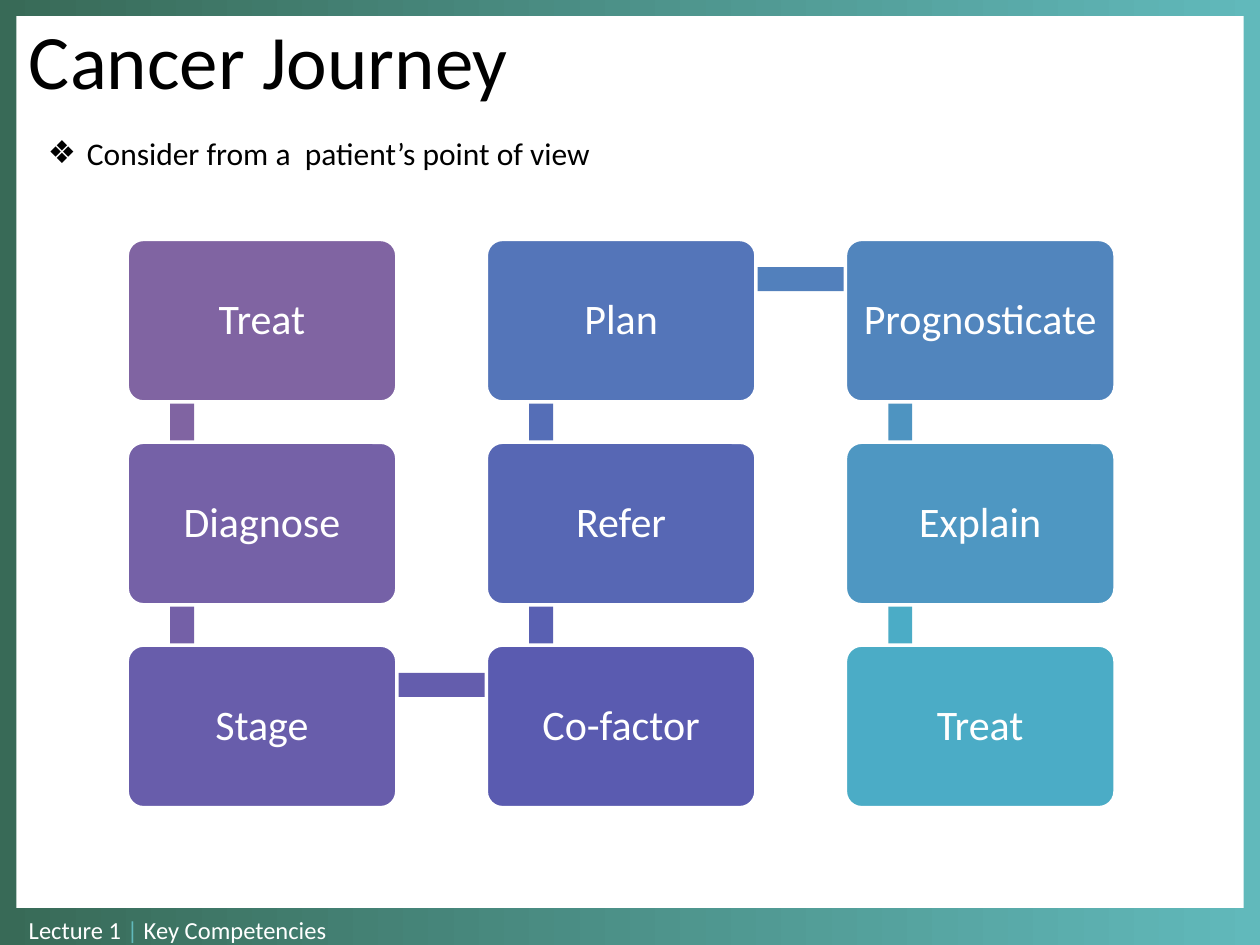
from lxml.etree import SubElement
from pptx import Presentation
from pptx.dml.color import RGBColor
from pptx.enum.shapes import MSO_SHAPE as Shape
from pptx.enum.text import MSO_ANCHOR as Anchor, MSO_AUTO_SIZE as AutoSize, PP_ALIGN as Align
from pptx.oxml.ns import qn
from pptx.util import Inches, Pt

WHITE = RGBColor(0xFF, 0xFF, 0xFF)
BLACK = RGBColor(0, 0, 0)
GREEN = RGBColor(0x38, 0x6A, 0x57)
TEAL = RGBColor(0x61, 0xB9, 0xBB)

# Journey grid: lefts of columns and tops of rows
COLUMNS = [1.01 + 2.85 * i for i in range(3)]
ROWS = [1.9 + 1.61 * i for i in range(3)]
BOX_WIDTH, BOX_HEIGHT = 2.14, 1.29
BAR = 0.19

# Label, column, row, box colour, colour of the bar to the next step
STEPS = [
    ("Treat", 0, 0, "8064A2", "8064A2"),
    ("Diagnose", 0, 1, "7561A7", "7460A7"),
    ("Stage", 0, 2, "685DAB", "645DAD"),
    ("Co-factor", 1, 2, "5A5BB0", "5960B2"),
    ("Refer", 1, 1, "5767B4", "556EB7"),
    ("Plan", 1, 0, "5475B9", "5280BC"),
    ("Prognosticate", 2, 0, "5185BD", "4E94C1"),
    ("Explain", 2, 1, "4E97C2", "4BACC6"),
    ("Treat", 2, 2, "4BACC6", None),
]


def set_values(target, values):
    for name, value in values.items():
        setattr(target, name, value)


def place(shape, left, top, width, height):
    set_values(shape, {"left": Inches(left), "top": Inches(top),
                       "width": Inches(width), "height": Inches(height)})


def add_run(paragraph, text, size, color):
    run = paragraph.add_run()
    run.text = text
    set_values(run.font, {"name": "Calibri", "size": Pt(size)})
    run.font.color.rgb = color


def add_block(slide, left, top, width, height, color=None, kind=Shape.RECTANGLE):
    """Add a borderless block; without a colour it gets the frame gradient."""
    shape = slide.shapes.add_shape(
        kind, Inches(left), Inches(top), Inches(width), Inches(height))
    shape.shadow.inherit = False
    shape.line.fill.background()
    if color is not None:
        shape.fill.solid()
        shape.fill.fore_color.rgb = color
    else:
        shape.fill.gradient()
        shape.fill.gradient_angle = 0
        for stop, position, stop_color in zip(
                shape.fill.gradient_stops, (0, 1), (GREEN, TEAL)):
            stop.position = position
            stop.color.rgb = stop_color
    return shape


def add_frame(slide):
    add_block(slide, 0, 0, 10, 0.13)
    add_block(slide, 0, 7.21, 10, 0.29)
    add_block(slide, 0, 0.06, 0.13, 7.44, GREEN)
    add_block(slide, 9.87, 0.03, 0.13, 7.44, TEAL)


def add_footer(slide):
    box = slide.shapes.add_textbox(Inches(0.13), Inches(7.21), Inches(5.34), Inches(0.34))
    box.text_frame.word_wrap = True
    for text, color in (("Lecture 1 ", WHITE), ("| ", TEAL), ("Key Competencies", WHITE)):
        add_run(box.text_frame.paragraphs[0], text, 14, color)


def fill_placeholder(shape, position, text, size):
    place(shape, *position)
    set_values(shape.text_frame, {"word_wrap": True, "auto_size": AutoSize.NONE,
                                  "vertical_anchor": Anchor.TOP})
    paragraph = shape.text_frame.paragraphs[0]
    set_values(paragraph, {"alignment": Align.LEFT, "space_before": Pt(0)})
    add_run(paragraph, text, size, BLACK)
    return paragraph


def add_bullet(paragraph, character, indent):
    properties = paragraph._p.get_or_add_pPr()
    properties.set("marL", str(Inches(indent)))
    properties.set("indent", str(-Inches(indent)))
    SubElement(properties, qn("a:buFont")).set("typeface", "Arial")
    SubElement(properties, qn("a:buChar")).set("char", character)


def add_bar(slide, column, row, next_column, next_row, color):
    """Add the bar between two steps; the boxes cover its ends."""
    left, top = COLUMNS[column], ROWS[min(row, next_row)]
    if column == next_column:
        add_block(slide, left + 0.34, top + 0.32, BAR, 1.6, color)
    else:
        add_block(slide, left + 0.44, top + 0.22, 2.84, BAR, color)


def add_step(slide, text, column, row, color):
    box = add_block(slide, COLUMNS[column], ROWS[row], BOX_WIDTH, BOX_HEIGHT,
                    color, Shape.ROUNDED_RECTANGLE)
    box.adjustments[0] = 0.1
    box.line.color.rgb = WHITE
    box.line.width = Pt(2)
    margins = {f"margin_{side}": Inches(0.1) for side in ("left", "top", "right", "bottom")}
    set_values(box.text_frame, {"word_wrap": True, "vertical_anchor": Anchor.MIDDLE, **margins})
    paragraph = box.text_frame.paragraphs[0]
    set_values(paragraph, {"alignment": Align.CENTER, "line_spacing": 0.9})
    add_run(paragraph, text, 24, WHITE)


def add_journey(slide):
    for step, following in zip(STEPS, STEPS[1:] + [None]):
        text, column, row, box_color, bar_color = step
        if following:
            add_bar(slide, column, row, following[1], following[2],
                    RGBColor.from_string(bar_color))
        add_step(slide, text, column, row, RGBColor.from_string(box_color))


def main():
    presentation = Presentation()
    set_values(presentation, {"slide_width": Inches(10), "slide_height": Inches(7.5)})
    slide = presentation.slides.add_slide(presentation.slide_layouts[1])

    # Frame and footer
    add_frame(slide)
    add_footer(slide)

    # Title and bullet
    fill_placeholder(slide.shapes.title, (0.13, 0.05, 9.73, 0.84), "Cancer Journey", 44)
    bullet = fill_placeholder(slide.placeholders[1], (0.28, 1.01, 9.45, 1.31),
                              "Consider from a  patient’s point of view", 18)
    add_bullet(bullet, "❖", 0.31)

    # Steps of the journey
    add_journey(slide)
    presentation.save("out.pptx")


if __name__ == "__main__":
    main()
